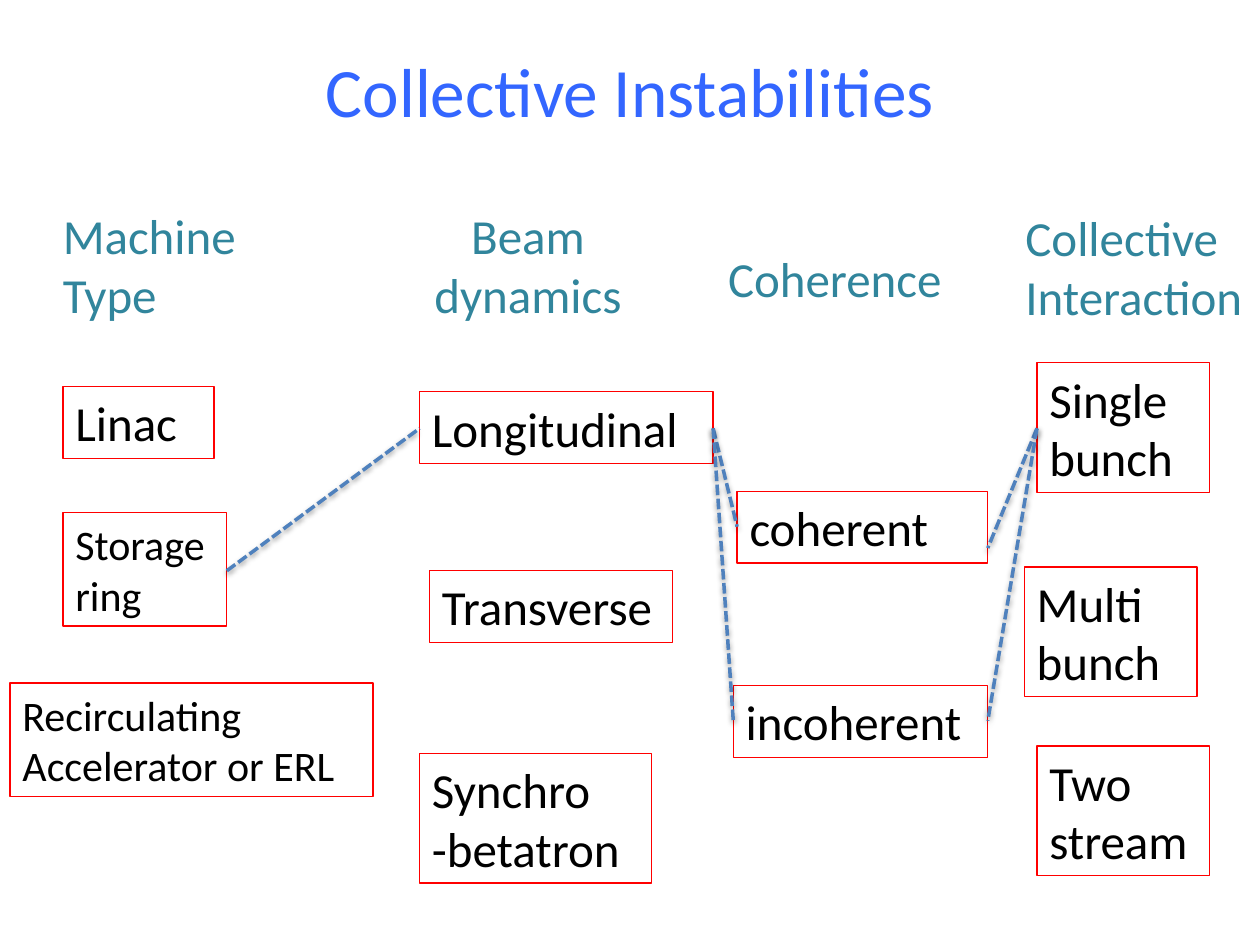
from pptx import Presentation, util as u
from pptx.dml.color import RGBColor
from pptx.enum import dml, shapes, text

TITLE_BLUE = RGBColor(0x33, 0x66, 0xFF)
HEADING_TEAL = RGBColor(0x31, 0x85, 0x9C)
LINK_BLUE = RGBColor(0x4F, 0x81, 0xBD)
BOX_RED = RGBColor(0xFF, 0x00, 0x00)
BLACK = RGBColor(0x00, 0x00, 0x00)

LEFT, CENTER = text.PP_ALIGN.LEFT, text.PP_ALIGN.CENTER


class SlideBuilder:
    """Holds the style and the current slide."""

    font_name = "Calibri"
    frame_format = {
        "auto_size": text.MSO_AUTO_SIZE.SHAPE_TO_FIT_TEXT,
        "vertical_anchor": text.MSO_ANCHOR.TOP,
    }

    def __init__(self, deck):
        self.page = deck.slides.add_slide(deck.slide_layouts[5])

    def place(self, item, area):
        for name, value in zip(("left", "top", "width", "height"), area):
            setattr(item, name, u.Inches(value))

    def add_lines(self, frame, lines, size, color, align=LEFT):
        font_format = {"name": self.font_name, "size": u.Pt(size)}
        for index, line in enumerate(lines):
            para = frame.add_paragraph() if index else frame.paragraphs[0]
            para.alignment = align
            span = para.add_run()
            span.text = line
            span.font.color.rgb = color
            for name, value in font_format.items():
                setattr(span.font, name, value)

    def format_frame(self, frame, wrap):
        for name, value in {**self.frame_format, "word_wrap": wrap}.items():
            setattr(frame, name, value)

    def title(self, words, area):
        title = self.page.shapes.title
        self.place(title, area)
        title.text_frame.vertical_anchor = text.MSO_ANCHOR.MIDDLE
        self.add_lines(title.text_frame, [words], 39.6, TITLE_BLUE, CENTER)

    def heading(self, lines, area, align=LEFT):
        box = self.page.shapes.add_textbox(*map(u.Inches, area))
        self.format_frame(box.text_frame, wrap=False)
        self.add_lines(box.text_frame, lines, 28, HEADING_TEAL, align)

    def box(self, lines, left, top, width, size=28):
        # Height follows from the line count: 1.2 line spacing plus insets
        height = round(len(lines) * size * 1.2 / 72 + 0.1, 2)
        box = self.page.shapes.add_shape(
            shapes.MSO_SHAPE.RECTANGLE, *map(u.Inches, (left, top, width, height)))
        box.shadow.inherit = False
        box.fill.background()
        box.line.color.rgb = BOX_RED
        box.line.width = u.Pt(0.75)
        self.format_frame(box.text_frame, wrap=True)
        self.add_lines(box.text_frame, lines, size, BLACK)

    def link(self, start, end):
        # The soft shadow of the theme is kept on these lines
        link = self.page.shapes.add_connector(
            shapes.MSO_CONNECTOR.STRAIGHT, *map(u.Inches, start + end))
        link.line.color.rgb = LINK_BLUE
        line_format = {"width": u.Pt(2), "dash_style": dml.MSO_LINE.SQUARE_DOT}
        for name, value in line_format.items():
            setattr(link.line, name, value)


def main():
    deck = Presentation()
    deck.slide_width, deck.slide_height = u.Inches(10), u.Inches(7.5)
    slide = SlideBuilder(deck)

    slide.title("Collective Instabilities", (0.5, 0.3, 9, 0.82))

    # Column headings
    slide.heading(["Machine", "Type"], (0.4, 1.58, 1.59, 1.04))
    slide.heading(["Beam", "dynamics"], (3.34, 1.58, 1.7, 1.04), CENTER)
    slide.heading(["Coherence"], (5.68, 1.92, 1.93, 0.57))
    slide.heading(["Collective", "Interaction"], (8.04, 1.6, 1.96, 1.04))

    # Machine type
    slide.box(["Linac"], 0.5, 3.07, 1.2)
    slide.box(["Storage", "ring"], 0.5, 4.07, 1.3, size=24)
    slide.box(["Recirculating", "Accelerator or ERL"], 0.08, 5.42, 2.88, size=24)

    # Beam dynamics
    slide.box(["Longitudinal"], 3.33, 3.11, 2.33)
    slide.box(["Transverse"], 3.41, 4.53, 1.93)
    slide.box(["Synchro", "-betatron"], 3.33, 5.98, 1.84)

    # Coherence
    slide.box(["coherent"], 5.85, 3.9, 1.99)
    slide.box(["incoherent"], 5.82, 5.44, 2.02)

    # Collective interaction
    for lines, left, top in (
        (["Single", "bunch"], 8.23, 2.88),
        (["Multi", "bunch"], 8.13, 4.5),
        (["Two", "stream"], 8.23, 5.92),
    ):
        slide.box(lines, left, top, 1.37)

    # Links from storage ring to single bunch
    longitudinal, single_bunch = (5.66, 3.4), (8.23, 3.4)
    slide.link((1.8, 4.53), (3.33, 3.4))
    slide.link(longitudinal, (5.85, 4.18))
    slide.link(longitudinal, (5.82, 5.72))
    slide.link(single_bunch, (7.84, 4.35))
    slide.link(single_bunch, (7.84, 5.72))

    deck.save("out.pptx")


if __name__ == "__main__":
    main()
